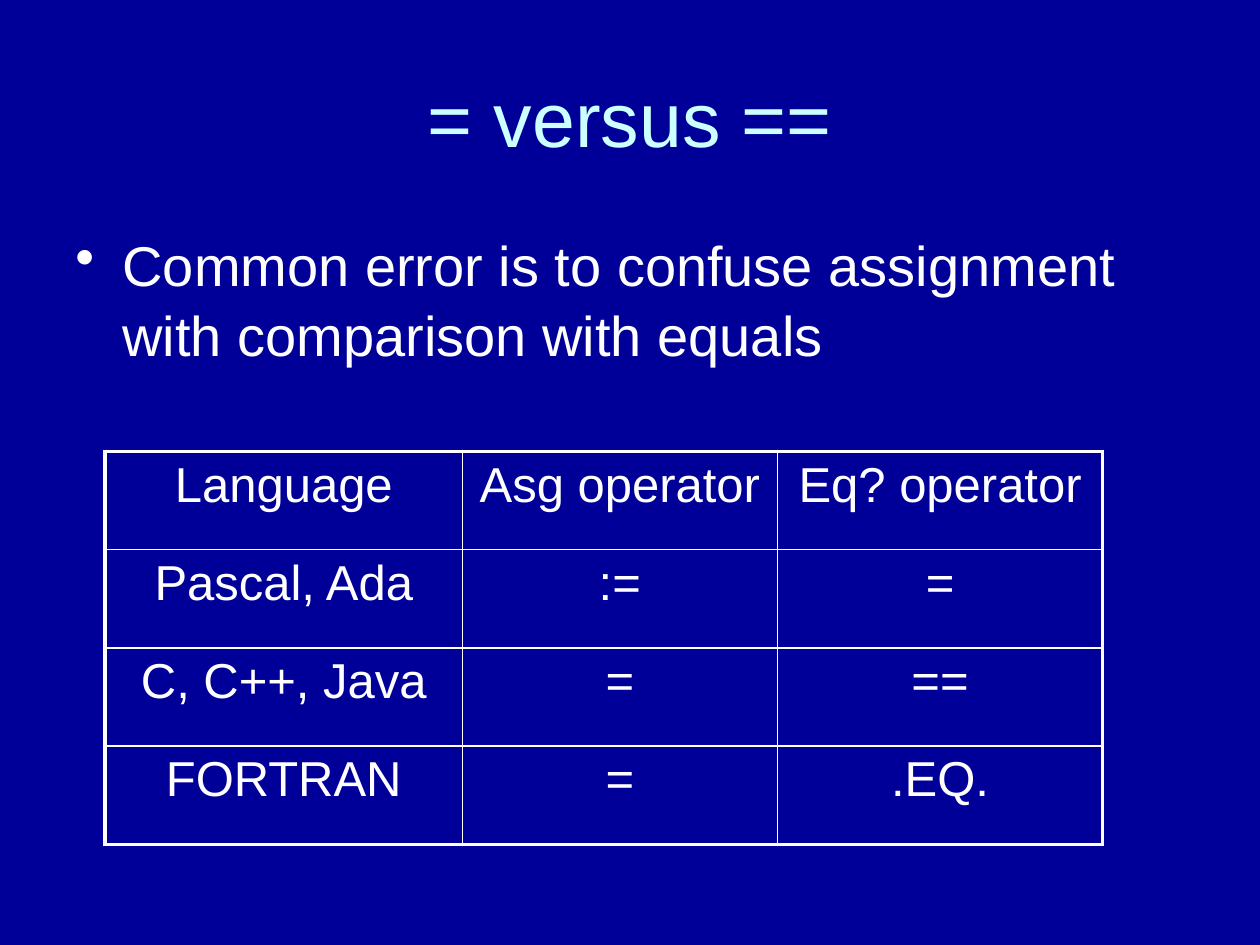
from lxml.etree import SubElement
from pptx import Presentation
from pptx.dml.color import RGBColor
from pptx.enum.text import MSO_ANCHOR, PP_ALIGN
from pptx.oxml.ns import qn
from pptx.util import Cm, Pt

NAVY = RGBColor(0x00, 0x00, 0x99)
WHITE = RGBColor(0xFF, 0xFF, 0xFF)
PALE_CYAN = RGBColor(0xCC, 0xFF, 0xFF)
THICK, THIN = Pt(2.25), Pt(1)


def write(frame, text, size, color, align):
    paragraph = frame.paragraphs[0]
    paragraph.text = text
    paragraph.alignment = align
    paragraph.font.name = "Arial"
    paragraph.font.size = Pt(size)
    paragraph.font.color.rgb = color
    return paragraph


def add_border(cell, side, width):
    line = SubElement(cell._tc.get_or_add_tcPr(), qn(f"a:ln{side}"), w=str(width))
    fill = SubElement(line, qn("a:solidFill"))
    SubElement(fill, qn("a:srgbClr"), val=str(WHITE))


deck = Presentation()
deck.slide_width, deck.slide_height = Cm(25.4), Cm(19.05)
page = deck.slides.add_slide(deck.slide_layouts[6])
page.background.fill.solid()
page.background.fill.fore_color.rgb = NAVY

# Title
title_box = page.shapes.add_textbox(Cm(1.27), Cm(0.76), Cm(22.86), Cm(3.18))
title_box.text_frame.word_wrap = True
title_box.text_frame.vertical_anchor = MSO_ANCHOR.MIDDLE
write(title_box.text_frame, "= versus ==", 44, PALE_CYAN, PP_ALIGN.CENTER)

# Bullet with a hanging indent
body_box = page.shapes.add_textbox(Cm(1.27), Cm(4.45), Cm(22.86), Cm(3.38))
body_box.text_frame.word_wrap = True
bullet = write(
    body_box.text_frame,
    "Common error is to confuse assignment with comparison with equals",
    32, WHITE, PP_ALIGN.LEFT,
)
bullet.line_spacing = 1.05
properties = bullet._p.get_or_add_pPr()
properties.set("marL", str(Cm(0.95)))
properties.set("indent", str(-Cm(0.95)))
mark = properties.makeelement(qn("a:buChar"), {"char": "•"})
properties.find(qn("a:lnSpc")).addnext(mark)

# Operator table
rows = [
    ("Language", "Asg operator", "Eq? operator"),
    ("Pascal, Ada", ":=", "="),
    ("C, C++, Java", "=", "=="),
    ("FORTRAN", "=", ".EQ."),
]
widths = [Cm(7.2), Cm(6.35), Cm(6.56)]
row_height = Cm(1.98)
last_row, last_column = len(rows) - 1, len(widths) - 1
table = page.shapes.add_table(
    len(rows), len(widths), Cm(2.12), Cm(9.1), sum(widths), row_height * len(rows)
).table
table.first_row = table.horz_banding = False
for column, width in zip(table.columns, widths):
    column.width = width

for row_index, texts in enumerate(rows):
    table.rows[row_index].height = row_height
    for column_index, text in enumerate(texts):
        cell = table.cell(row_index, column_index)
        write(cell.text_frame, text, 28, WHITE, PP_ALIGN.CENTER)
        # Thick outer frame, thin inner rules
        outer_sides = {
            "L": column_index == 0,
            "R": column_index == last_column,
            "T": row_index == 0,
            "B": row_index == last_row,
        }
        for side, is_outer in outer_sides.items():
            add_border(cell, side, THICK if is_outer else THIN)
        cell.fill.background()

deck.save("out.pptx")
